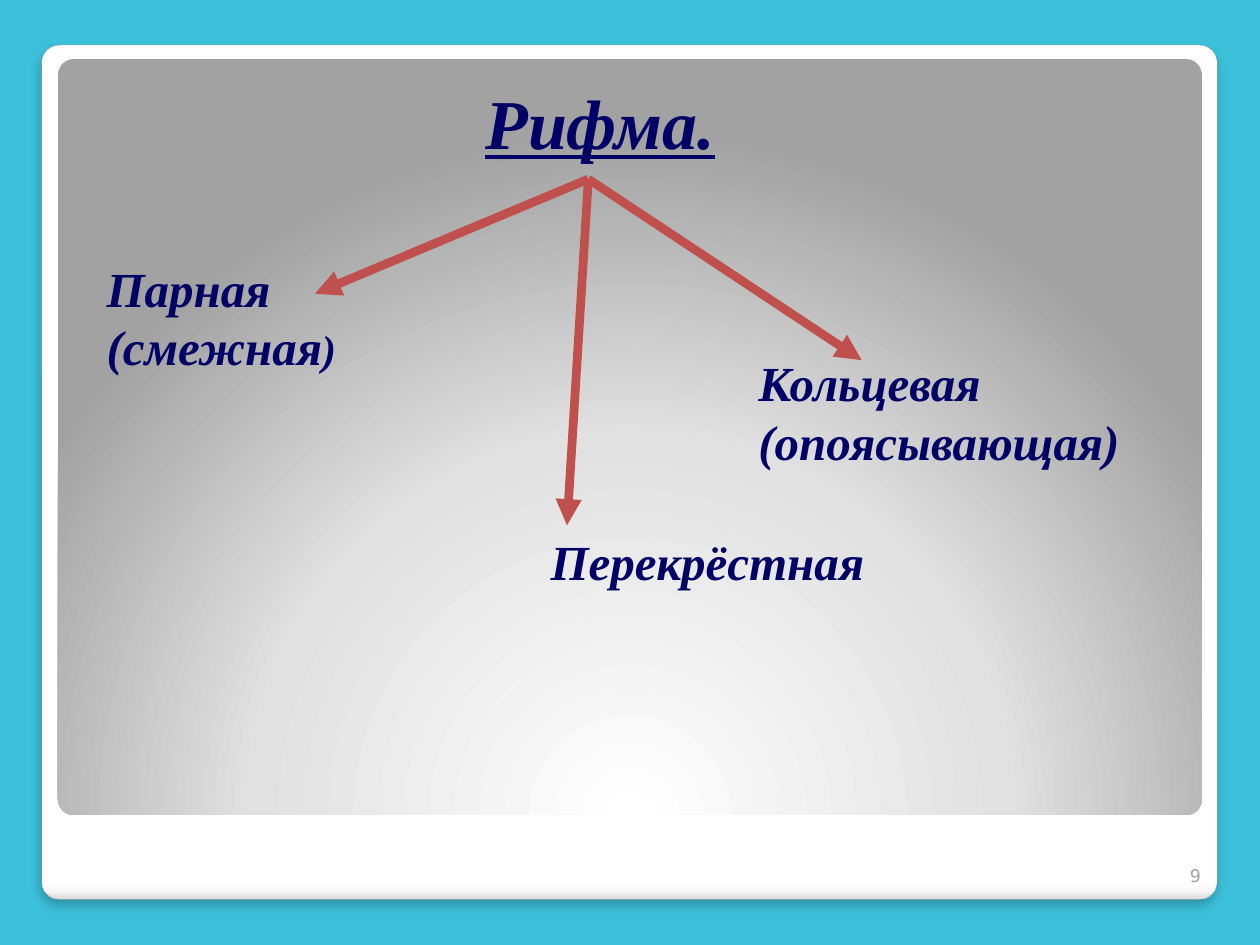
"""Build a slide naming the three kinds of rhyme."""
from pptx import Presentation
from pptx.dml.color import RGBColor
from pptx.enum import shapes, text
from pptx.oxml import parse_xml
from pptx.oxml.ns import nsdecls
from pptx.util import Cm, Pt

SKY = RGBColor(0x3D, 0xC1, 0xDB)
NAVY = RGBColor(0x00, 0x00, 0x66)
RED = RGBColor(0xC0, 0x50, 0x4D)
EDGE = RGBColor(0xA4, 0xA4, 0xA4)
SAND = RGBColor(0xA8, 0xA4, 0x9B)
SERIF = "Times New Roman"

TITLE = ("Рифма.", (9.53, 1.47, 10.16, 3.68))
KINDS = [
    ([["Парная"], ["(смежная", ")"]], (1.9, 5.08, 5.18, 2.64), (6.35, 5.92)),
    ([["Перекрёстная"]], (10.85, 10.59, 6.88, 1.45), (11.43, 10.59)),
    ([["Кольцевая"], ["(опоясывающая)"]], (15.04, 6.99, 7.87, 2.64), (17.37, 7.26)),
]
START = (11.86, 3.61)
NUMBER = ("9", (23.19, 16.97, 1.27, 1.02))
FRAME = (
    (0.84, 0.91, 23.7, 17.22),
    [(0, "FFFFFF"), (98, "FFFFFF"), (99, "F7F7F7"), (100, "DADADA")],
    '<a:lin ang="5400000" scaled="0"/>',
)
PANEL = (
    (1.17, 1.19, 23.06, 15.24),
    [(0, "FFFFFF"), (55, "E1E1E1"), (100, "A2A2A2")],
    '<a:path path="circle"><a:fillToRect l="50000" t="175000" r="50000" b="-75000"/></a:path>',
)
SHADE = (
    f'<a:outerShdw {nsdecls("a")} blurRad="76200" dist="50800" dir="5400000" '
    'algn="t" rotWithShape="0"><a:srgbClr val="000000"><a:alpha val="25000"/>'
    "</a:srgbClr></a:outerShdw>"
)


def add_card(slide, box, stops, mode):
    card = slide.shapes.add_shape(shapes.MSO_SHAPE.ROUNDED_RECTANGLE, *map(Cm, box))
    card.adjustments[0] = 0.021
    card.shadow.inherit = False
    card.line.fill.background()
    card.fill.solid()
    marks = "".join(
        f'<a:gs pos="{pos * 1000}"><a:srgbClr val="{tint}"/></a:gs>' for pos, tint in stops
    )
    props = card._element.spPr
    props.replace(
        props.find("{*}solidFill"),
        parse_xml(
            f'<a:gradFill {nsdecls("a")} rotWithShape="1"><a:gsLst>{marks}</a:gsLst>{mode}</a:gradFill>'
        ),
    )
    return card


def set_font(para, size, tint, name=SERIF, bold=True):
    font = para.font
    font.size, font.name, font.color.rgb = Pt(size), name, tint
    font.bold = font.italic = bold


def add_label(slide, rows, box):
    frame = slide.shapes.add_textbox(*map(Cm, box)).text_frame
    frame.word_wrap = False
    for i, runs in enumerate(rows):
        para = frame.add_paragraph() if i else frame.paragraphs[0]
        set_font(para, 28, NAVY)
        for words in runs:
            run = para.add_run()
            run.text = words
            if words == ")":
                run.font.size = Pt(24)


def add_arrow(slide, end):
    arrow = slide.shapes.add_connector(
        shapes.MSO_CONNECTOR.STRAIGHT, *map(Cm, START + end)
    )
    arrow.line.color.rgb = RED
    arrow.line.width = Pt(5)
    arrow.line._get_or_add_ln().append(
        parse_xml(f'<a:tailEnd {nsdecls("a")} type="triangle"/>')
    )
    arrow._element.spPr.append(parse_xml(f'<a:effectLst {nsdecls("a")}/>'))


def main():
    deck = Presentation()
    deck.slide_width, deck.slide_height = Cm(25.4), Cm(19.05)
    slide = deck.slides.add_slide(deck.slide_layouts[5])
    slide.background.fill.solid()
    slide.background.fill.fore_color.rgb = SKY

    frame = add_card(slide, *FRAME)
    frame.line.color.rgb = EDGE
    frame.line.width = Pt(0.16)
    frame._element.spPr.find("{*}effectLst").append(parse_xml(SHADE))
    add_card(slide, *PANEL)

    title = slide.shapes.title
    words, box = TITLE
    title.left, title.top, title.width, title.height = map(Cm, box)
    title.text_frame.text = words
    title.text_frame.vertical_anchor = text.MSO_ANCHOR.TOP
    para = title.text_frame.paragraphs[0]
    para.alignment = text.PP_ALIGN.LEFT
    set_font(para, 40, NAVY)
    para.font.underline = True
    slide.shapes._spTree.append(title._element)

    for rows, box, end in KINDS:
        add_label(slide, rows, box)
        add_arrow(slide, end)

    words, box = NUMBER
    note = slide.shapes.add_textbox(*map(Cm, box)).text_frame
    note.word_wrap = True
    note.vertical_anchor = text.MSO_ANCHOR.BOTTOM
    note.text = words
    para = note.paragraphs[0]
    para.alignment = text.PP_ALIGN.RIGHT
    set_font(para, 10, SAND, "DejaVu Sans", False)

    deck.save("out.pptx")


if __name__ == "__main__":
    main()
